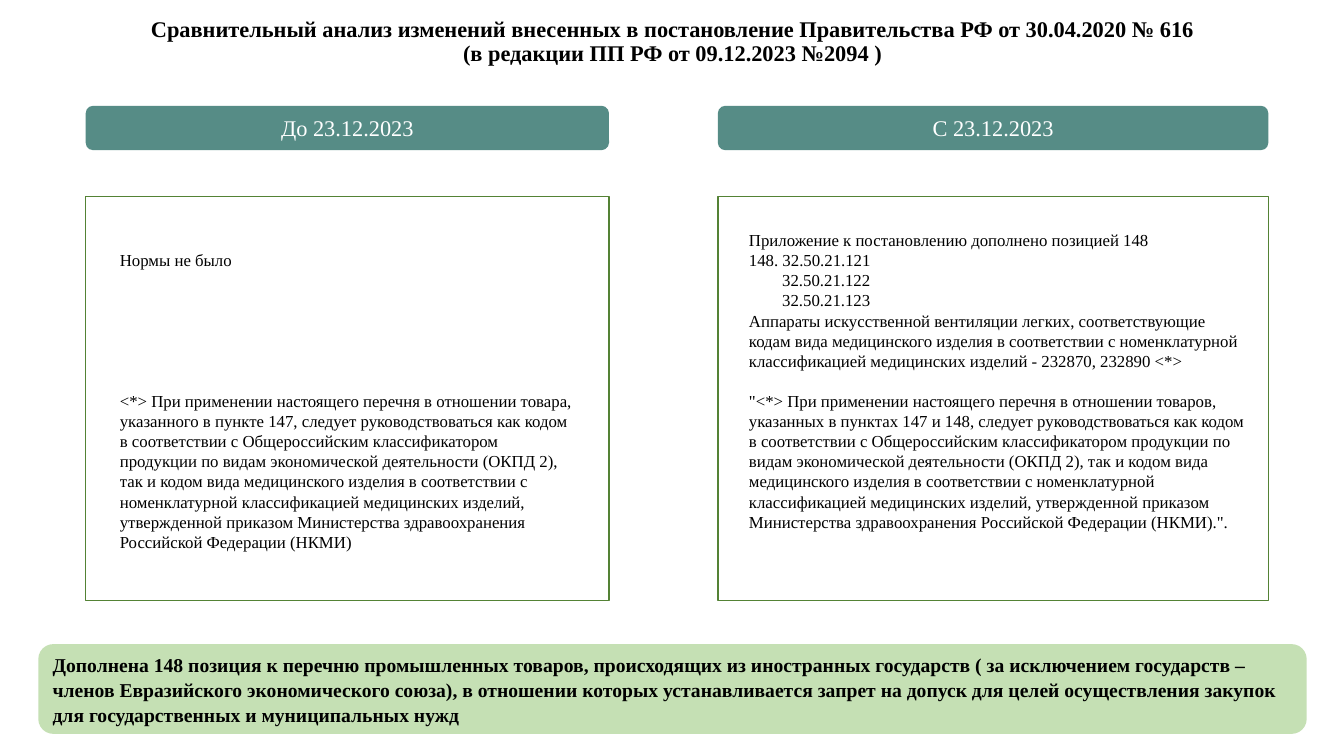
import pptx
import pptx.dml.color
import pptx.enum.shapes
import pptx.enum.text
import pptx.util
from dataclasses import dataclass

PX = 9144  # 100 px to the inch
SHAPE = pptx.enum.shapes.MSO_SHAPE
ALIGN = pptx.enum.text.PP_ALIGN
ANCHOR = pptx.enum.text.MSO_ANCHOR
FIT = pptx.enum.text.MSO_AUTO_SIZE


@dataclass(frozen=True)
class Theme:
    font: str = "Times New Roman"
    ink: str = "000000"
    white: str = "FFFFFF"
    header: str = "568C86"
    border: str = "548235"
    banner: str = "C5E0B4"
    heading_pt: int = 16
    banner_pt: int = 14
    body_pt: int = 12


THEME = Theme()

TITLE = (
    "Сравнительный анализ изменений внесенных в постановление Правительства РФ от 30.04.2020 № 616",
    "(в редакции ПП РФ от 09.12.2023 №2094 )",
)
BANNER = (
    "Дополнена 148 позиция к перечню промышленных товаров, происходящих из иностранных государств "
    "( за исключением государств – членов Евразийского экономического союза), в отношении которых "
    "устанавливается запрет на допуск для целей осуществления закупок для государственных и "
    "муниципальных нужд"
)

# Paragraphs: text, left indent in px, space before in points
BEFORE = [
    ("Нормы не было", 0, 0),
    ("<*> При применении настоящего перечня в отношении товара, указанного в пункте 147, следует "
     "руководствоваться как кодом в соответствии с Общероссийским классификатором продукции по видам "
     "экономической деятельности (ОКПД 2), так и кодом вида медицинского изделия в соответствии с "
     "номенклатурной классификацией медицинских изделий, утвержденной приказом Министерства "
     "здравоохранения Российской Федерации (НКМИ)", 0, 86),
]
AFTER = [
    ("Приложение к постановлению дополнено позицией 148", 0, 0),
    ("148. 32.50.21.121", 0, 0),
    ("32.50.21.122", 33, 0),
    ("32.50.21.123", 33, 0),
    ("Аппараты искусственной вентиляции легких, соответствующие кодам вида медицинского изделия в "
     "соответствии с номенклатурной классификацией медицинских изделий - 232870, 232890 <*>", 0, 0),
    ("\"<*> При применении настоящего перечня в отношении товаров, указанных в пунктах 147 и 148, "
     "следует руководствоваться как кодом в соответствии с Общероссийским классификатором продукции "
     "по видам экономической деятельности (ОКПД 2), так и кодом вида медицинского изделия в "
     "соответствии с номенклатурной классификацией медицинских изделий, утвержденной приказом "
     "Министерства здравоохранения Российской Федерации (НКМИ).\".", 0, 14),
]

# Columns: heading, panel left and width, text box (left, top, width, height), paragraphs
COLUMNS = [
    ("До 23.12.2023", 85, 519, (109, 243, 471, 313), BEFORE),
    ("С 23.12.2023", 712, 546, (733, 223, 512, 353), AFTER),
]


def emu(*lengths):
    return [pptx.util.Emu(n * PX) for n in lengths]


def rgb(color):
    return pptx.dml.color.RGBColor.from_string(color)


def add_run(p, text, size, color=THEME.ink, bold=False):
    r = p.add_run()
    r.text = text
    r.font.name = THEME.font
    r.font.size = pptx.util.Pt(size)
    r.font.bold = bold
    r.font.color.rgb = rgb(color)


def add_title(s, lines):
    sp = s.shapes.title
    sp.left, sp.top, sp.width, sp.height = emu(92, 20, 1150, 44)
    tf = sp.text_frame
    tf.auto_size = FIT.NONE
    tf.vertical_anchor = ANCHOR.MIDDLE
    p = tf.paragraphs[0]
    p.alignment = ALIGN.CENTER
    p.line_spacing = 0.9
    for i, line in enumerate(lines):
        if i:
            p.add_line_break()
        add_run(p, line, THEME.heading_pt, bold=True)


def add_block(s, kind, box, fill=None, line=None):
    sp = s.shapes.add_shape(kind, *emu(*box))
    sp.shadow.inherit = False
    if fill:
        sp.fill.solid()
        sp.fill.fore_color.rgb = rgb(fill)
    else:
        sp.fill.background()
    if line:
        sp.line.color.rgb = rgb(line)
        sp.line.width = pptx.util.Pt(1)
    else:
        sp.line.fill.background()
    return sp


def add_label(s, box, fill, text, size, color, align, bold=False, spacing=1.0):
    sp = add_block(s, SHAPE.ROUNDED_RECTANGLE, box, fill=fill)
    tf = sp.text_frame
    tf.word_wrap = True
    tf.vertical_anchor = ANCHOR.MIDDLE
    p = tf.paragraphs[0]
    p.alignment = align
    p.line_spacing = spacing
    add_run(p, text, size, color, bold)


def add_body(s, box, paragraphs):
    tf = s.shapes.add_textbox(*emu(*box)).text_frame
    tf.word_wrap = True
    tf.auto_size = FIT.SHAPE_TO_FIT_TEXT
    for i, (text, indent, before) in enumerate(paragraphs):
        p = tf.add_paragraph() if i else tf.paragraphs[0]
        p.space_before = pptx.util.Pt(before)
        if indent:
            p._p.get_or_add_pPr().set("marL", str(indent * PX))
        add_run(p, text, THEME.body_pt)


def main():
    prs = pptx.Presentation()
    prs.slide_width, prs.slide_height = emu(1333, 750)
    s = prs.slides.add_slide(prs.slide_layouts[5])
    add_title(s, TITLE)

    # Two columns: heading, framed panel, text
    for heading, left, width, text_box, paragraphs in COLUMNS:
        add_label(s, (left, 105, width, 44), THEME.header, heading,
                  THEME.heading_pt, THEME.white, ALIGN.CENTER)
        add_block(s, SHAPE.RECTANGLE, (left, 195, width, 401), line=THEME.border)
        add_body(s, text_box, paragraphs)

    # Summary banner
    add_label(s, (38, 639, 1258, 89), THEME.banner, BANNER,
              THEME.banner_pt, THEME.ink, ALIGN.LEFT, bold=True, spacing=1.07)

    prs.save("out.pptx")


if __name__ == "__main__":
    main()
